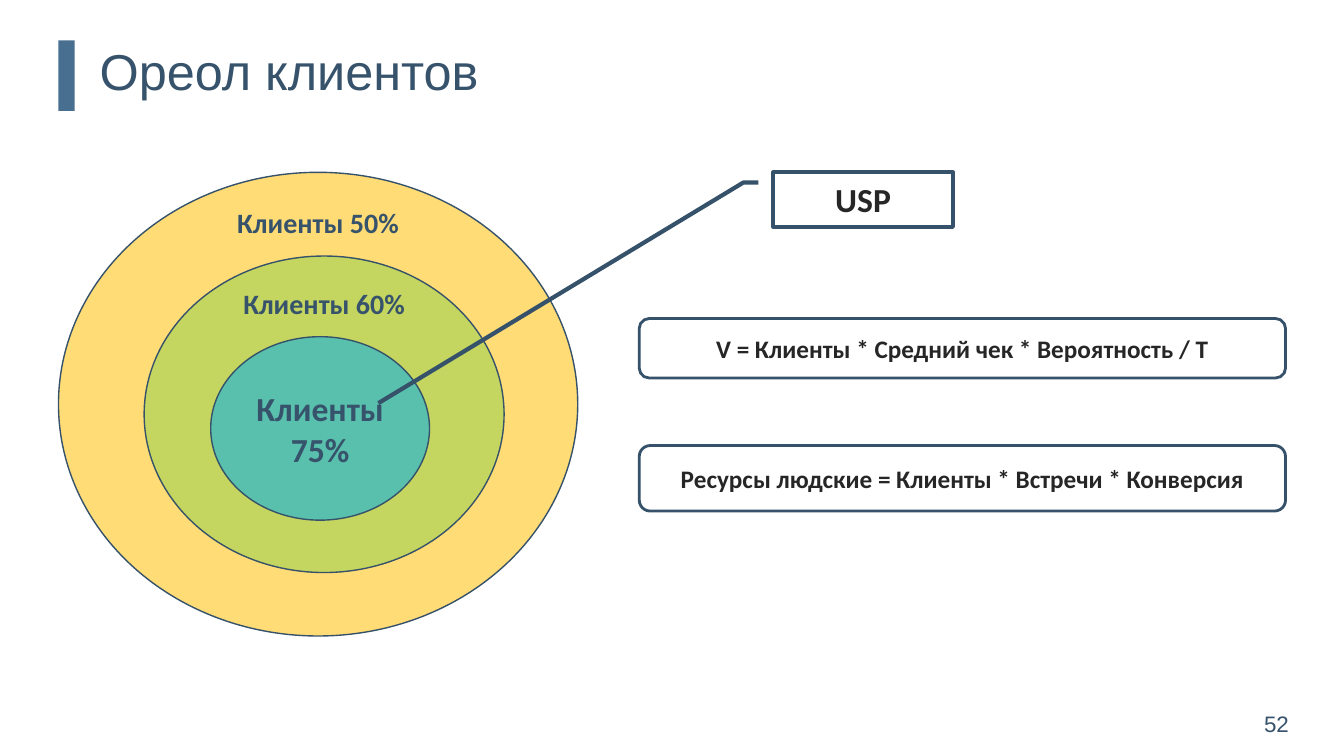
from lxml import etree
from pptx import Presentation
from pptx.dml.color import RGBColor
from pptx.enum.shapes import MSO_SHAPE
from pptx.enum.text import MSO_ANCHOR, PP_ALIGN
from pptx.oxml.ns import qn
from pptx.util import Inches, Pt

COLORS = {
    "bar": "496F90", "outline": "36526B", "heading": "37536C", "body": "262626",
    "outer": "FFC000", "middle": "92D050", "core": "00B0F0",
}
RING_OPACITY = 54
LABEL_HEIGHT = 0.4

title = "Ореол клиентов"
page_number = "52"
rings = [
    ("outer", (0.58, 1.71, 5.15, 4.6), "Клиенты 50%", 2.21),
    ("middle", (1.43, 2.54, 3.57, 3.14), "Клиенты 60%", 3.01),
    ("core", (2.09, 3.34, 2.17, 1.82), "Клиенты 75%", None),
]
usp = ("USP", (7.67, 1.71, 1.78, 0.54))
usp_leader = (0.188, -0.083, 0.188, -0.167, 4.24, -2.201)
formulas = [
    ("V = Клиенты * Средний чек * Вероятность / T", (6.34, 3.16, 6.41, 0.59)),
    ("Ресурсы людские = Клиенты * Встречи * Конверсия", (6.34, 4.42, 6.41, 0.65)),
]

presentation = Presentation()
presentation.slide_width = Inches(13.33)
presentation.slide_height = Inches(7.5)
slide = presentation.slides.add_slide(presentation.slide_layouts[6])


def write(shape, text, size=20, color="heading", font="Calibri", bold=True,
          align=PP_ALIGN.CENTER, anchor=MSO_ANCHOR.MIDDLE, margin=0.1,
          before=0, line_spacing=None):
    frame = shape.text_frame
    frame.word_wrap = True
    frame.vertical_anchor = anchor
    frame.margin_left = frame.margin_right = Inches(margin)
    frame.margin_top = frame.margin_bottom = Inches(margin / 2)
    paragraph = frame.paragraphs[0]
    paragraph.alignment = align
    paragraph.space_before = Pt(before)
    if line_spacing:
        paragraph.line_spacing = line_spacing
    run = paragraph.add_run()
    run.text = text
    run.font.size = Pt(size)
    run.font.name = font
    run.font.bold = bold
    run.font.color.rgb = RGBColor.from_string(COLORS[color])


def add_box(place):
    return slide.shapes.add_textbox(*map(Inches, place))


def add_outline(kind, place, fill=None, opacity=100, line_width=0):
    shape = slide.shapes.add_shape(kind, *map(Inches, place))
    shape.shadow.inherit = False
    if fill:
        shape.fill.solid()
        shape.fill.fore_color.rgb = RGBColor.from_string(COLORS[fill])
        if opacity < 100:
            tint = shape.fill._xPr.find(qn("a:solidFill"))[0]
            etree.SubElement(tint, qn("a:alpha")).set("val", str(opacity * 1000))
    else:
        shape.fill.background()
    if line_width:
        shape.line.color.rgb = RGBColor.from_string(COLORS["outline"])
        shape.line.width = Pt(line_width)
    else:
        shape.line.fill.background()
    return shape


add_outline(MSO_SHAPE.RECTANGLE, (0.58, 0.4, 0.16, 0.7), fill="bar")
write(add_box((0.89, 0.42, 9.21, 0.65)), title, size=36, font="Arial", bold=False,
      align=PP_ALIGN.LEFT, anchor=MSO_ANCHOR.TOP, line_spacing=0.9)

for level, place, label, label_center in rings:
    ring = add_outline(MSO_SHAPE.OVAL, place, level, RING_OPACITY, 1)
    if label_center is None:
        write(ring, label, size=24, margin=0)
    else:
        left, _, width, _ = place
        write(add_box((left, label_center - LABEL_HEIGHT / 2, width, LABEL_HEIGHT)), label)

usp_text, usp_place = usp
callout = add_outline(MSO_SHAPE.LINE_CALLOUT_2, usp_place, line_width=3)
for index, value in enumerate(usp_leader):
    callout.adjustments[index] = value
write(callout, usp_text, size=24, color="body", before=4.8)

for formula, place in formulas:
    write(add_outline(MSO_SHAPE.ROUNDED_RECTANGLE, place, line_width=2),
          formula, size=18, color="body", before=3.6)

write(add_box((12.32, 6.98, 0.68, 0.4)), page_number, size=16, font="Arial", bold=False)

presentation.save("out.pptx")
